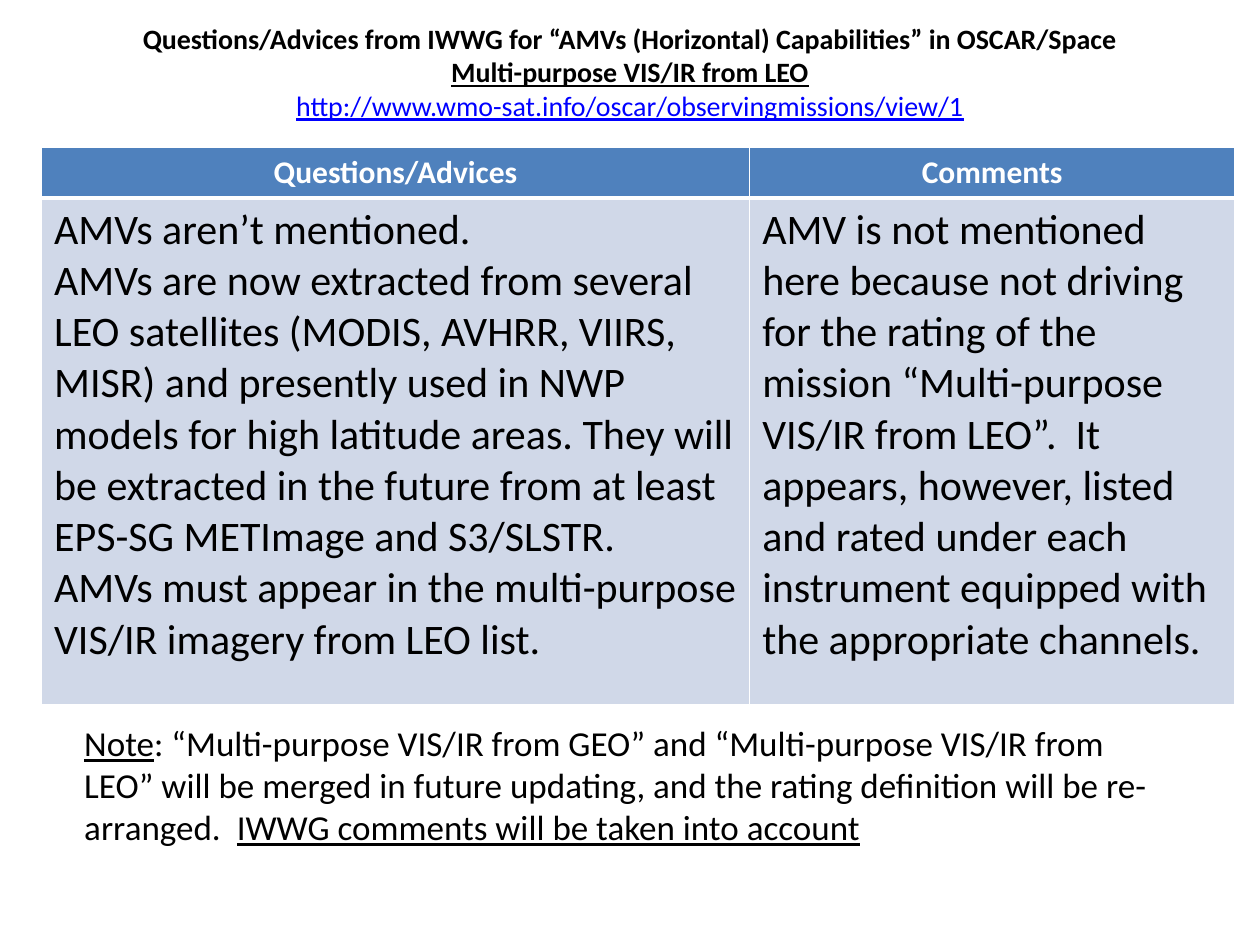
from pptx import Presentation
from pptx.util import Inches, Pt
from pptx.dml.color import RGBColor as RGB
from pptx.enum.text import PP_ALIGN as Align, MSO_ANCHOR as Anchor
from pptx.oxml import parse_xml
from pptx.oxml.ns import nsdecls

HUES = {"head": "4F81BD", "body": "D0D8E8", "white": "FFFFFF",
        "ink": "000000", "link": "0000FF"}
FONT = "Calibri"

# Content: text, bold, underlined, colour
TITLE = [
    ("Questions/Advices from IWWG for “AMVs (Horizontal) Capabilities” in OSCAR/Space",
     True, False, "ink"),
    ("Multi-purpose VIS/IR from LEO", True, True, "ink"),
    ("http://www.wmo-sat.info/oscar/observingmissions/view/1", False, True, "link"),
]
NOTE = [
    ("Note", False, True, "ink"),
    (": “Multi-purpose VIS/IR from GEO” and “Multi-purpose VIS/IR from LEO” will be "
     "merged in future updating, and the rating definition will be re-arranged.  ",
     False, False, "ink"),
    ("IWWG comments will be taken into account", False, True, "ink"),
]
ROWS = [
    [["Questions/Advices"], ["Comments"]],
    [["AMVs aren’t mentioned.",
      "AMVs are now extracted from several LEO satellites (MODIS, AVHRR, VIIRS, MISR) "
      "and presently used in NWP models for high latitude areas. They will be extracted "
      "in the future from at least EPS-SG METImage and S3/SLSTR.",
      "AMVs must appear in the multi-purpose VIS/IR imagery from LEO list."],
     ["AMV is not mentioned here because not driving for the rating of the mission "
      "“Multi-purpose VIS/IR from LEO”.  It appears, however, listed and rated under "
      "each instrument equipped with the appropriate channels."]],
]
WIDTHS = [5.62, 3.85]
HEIGHTS = [0.4, 4.02]
# Row looks: fill, text colour, size, bold, alignment, bottom and top line widths
LOOKS = [("head", "white", 18, True, Align.CENTER, 3, 1),
         ("body", "ink", 24, False, Align.LEFT, 1, 3)]


def hue(name):
    return RGB.from_string(HUES[name])


def set_font(font, size, color, bold):
    font.name, font.size, font.bold = FONT, Pt(size), bold
    font.color.rgb = hue(color)


def add_text(slide, box, runs, size, align, anchor, breaks=False):
    shape = slide.shapes.add_textbox(*map(Inches, box))
    frame = shape.text_frame
    frame.word_wrap, frame.vertical_anchor = True, anchor
    para = frame.paragraphs[0]
    para.alignment = align
    para.font.name, para.font.size = FONT, Pt(size)
    for i, (text, bold, under, color) in enumerate(runs):
        if breaks and i:
            para.add_line_break()
        run = para.add_run()
        run.text = text
        set_font(run.font, size, color, bold)
        run.font.underline = under


def add_lines(cell, top, bottom):
    props = cell._tc.get_or_add_tcPr()
    for side, width in zip("LRTB", (1, 1, top, bottom)):
        props.append(parse_xml(
            f'<a:ln{side} {nsdecls("a")} w="{Pt(width)}"><a:solidFill>'
            f'<a:srgbClr val="{HUES["white"]}"/></a:solidFill></a:ln{side}>'))


def add_grid(slide):
    box = (0.33, 1.17, sum(WIDTHS), sum(HEIGHTS))
    grid = slide.shapes.add_table(len(ROWS), len(WIDTHS), *map(Inches, box)).table
    for col, width in zip(grid.columns, WIDTHS):
        col.width = Inches(width)
    for r, (row, look) in enumerate(zip(ROWS, LOOKS)):
        fill, color, size, bold, align, bottom, top = look
        grid.rows[r].height = Inches(HEIGHTS[r])
        for c, lines in enumerate(row):
            cell = grid.cell(r, c)
            add_lines(cell, top, bottom)
            cell.fill.solid()
            cell.fill.fore_color.rgb = hue(fill)
            cell.text_frame.text = "\n".join(lines)
            for para in cell.text_frame.paragraphs:
                para.alignment = align
                set_font(para.font, size, color, bold)


def main():
    deck = Presentation()
    deck.slide_width, deck.slide_height = Inches(10), Inches(7.5)
    slide = deck.slides.add_slide(deck.slide_layouts[6])
    # Title, table, closing note
    add_text(slide, (0.5, 0.02, 9, 1.1), TITLE, 16, Align.CENTER, Anchor.MIDDLE, True)
    add_grid(slide)
    add_text(slide, (0.57, 5.68, 8.75, 1.11), NOTE, 20, Align.LEFT, Anchor.TOP)
    deck.save("out.pptx")


if __name__ == "__main__":
    main()
